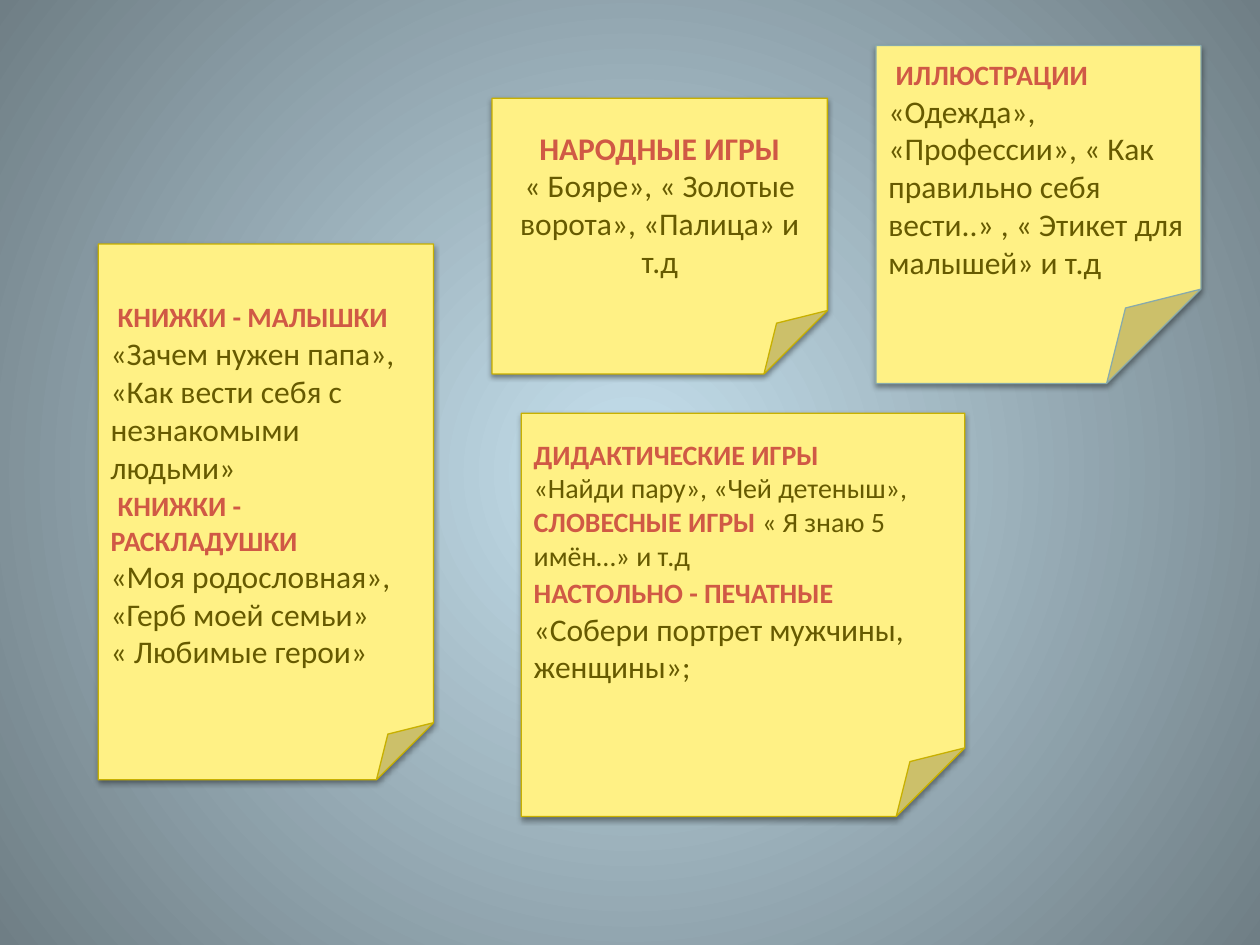
from lxml import etree
from pptx import Presentation
from pptx import util as u
from pptx.dml.color import RGBColor
from pptx.enum import shapes, text
from pptx.oxml import ns, parse_xml

PAPER = RGBColor(0xFF, 0xF1, 0x85)
GOLD = RGBColor(0xC8, 0xB0, 0x00)
TEAL = RGBColor(0x88, 0xAA, 0xAB)
HEADING = RGBColor(0xD0, 0x59, 0x45)
BODY = RGBColor(0x66, 0x5A, 0x00)
GLOW = RGBColor(0xC5, 0xE0, 0xED)
EDGE = RGBColor(0x6F, 0x7E, 0x85)

RADIAL = (f'<a:path {ns.nsdecls("a")} path="circle">'
          '<a:fillToRect l="50000" t="50000" r="50000" b="50000"/></a:path>')
SHADOW = (f'<a:outerShdw {ns.nsdecls("a")} blurRad="40000" dist="20000" '
          'dir="5400000" rotWithShape="0"><a:srgbClr val="000000">'
          '<a:alpha val="38000"/></a:srgbClr></a:outerShdw>')


def head(words, size=16):
    return words, {"size": u.Pt(size), "bold": True}, HEADING


def body(words, size=18):
    return words, {"size": u.Pt(size), "bold": False}, BODY


class NoteBoard:
    """Holds the style and the current slide."""

    font_name = "Calibri"

    def __init__(self, deck):
        self.page = deck.slides.add_slide(deck.slide_layouts[6])

    def background(self, centre, rim):
        fill = self.page.background.fill
        fill.gradient()
        for stop, colour in zip(fill.gradient_stops, (centre, rim)):
            stop.color.rgb = colour
        gradient = self.page.element.find(".//" + ns.qn("a:gradFill"))
        gradient.replace(gradient.find(ns.qn("a:lin")), parse_xml(RADIAL))

    def note(self, place, paragraphs, border=GOLD, fold=0.17,
             align=text.PP_ALIGN.LEFT, bottom=0.13):
        box = self.page.shapes.add_shape(
            shapes.MSO_SHAPE.FOLDED_CORNER, *(u.Cm(length) for length in place))
        self.fold_corner(box, fold)
        box.fill.solid()
        box.fill.fore_color.rgb = PAPER
        box.line.color.rgb = border
        box.line.width = u.Pt(0.75)
        self.drop_shadow(box)

        frame = box.text_frame
        frame_format = {"word_wrap": True, "margin_bottom": u.Cm(bottom),
                        "vertical_anchor": text.MSO_ANCHOR.MIDDLE}
        for name, value in frame_format.items():
            setattr(frame, name, value)
        for index, spans in enumerate(paragraphs):
            para = frame.add_paragraph() if index else frame.paragraphs[0]
            para.alignment = align
            for span in spans:
                self.span(para, *span)

    def span(self, para, words, font_format, colour):
        run = para.add_run()
        run.text = words
        for name, value in {"name": self.font_name, **font_format}.items():
            setattr(run.font, name, value)
        run.font.color.rgb = colour

    def fold_corner(self, box, fold):
        # python-pptx lists no adjustment for this preset
        guides = box.element.spPr.find(".//" + ns.qn("a:avLst"))
        etree.SubElement(guides, ns.qn("a:gd"), name="adj",
                         fmla=f"val {round(fold * 100000)}")

    def drop_shadow(self, box):
        box.shadow.inherit = False
        effects = box.element.spPr.find(ns.qn("a:effectLst"))
        effects.append(parse_xml(SHADOW))


def main():
    deck = Presentation()
    deck.slide_width, deck.slide_height = u.Cm(25.4), u.Cm(19.05)
    board = NoteBoard(deck)
    board.background(GLOW, EDGE)

    # Small books and fold-out books
    board.note((1.98, 4.92, 6.76, 10.8), [
        [body(" "), head("КНИЖКИ - МАЛЫШКИ")],
        [body("«Зачем нужен папа», «Как вести себя с незнакомыми людьми»")],
        [body(" "), head("КНИЖКИ - РАСКЛАДУШКИ")],
        [body("«Моя родословная», «Герб моей семьи»")],
        [body("« Любимые герои»")],
    ])

    # Illustrations
    board.note((17.66, 0.92, 6.55, 6.81), [
        [body(" "), head("ИЛЛЮСТРАЦИИ "),
         body("«Одежда», «Профессии», « Как правильно себя вести..» , "
              "« Этикет для малышей» и т.д")],
    ], border=TEAL, fold=0.29)

    # Didactic, word and board games; the text sits above the middle
    board.note((10.51, 8.33, 8.94, 8.13), [
        [head("ДИДАКТИЧЕСКИЕ ИГРЫ")],
        [body("«Найди пару», «Чей детеныш»,", 16)],
        [head("СЛОВЕСНЫЕ ИГРЫ "), body("« Я знаю 5 имён…» и т.д", 16)],
        [head("НАСТОЛЬНО - ПЕЧАТНЫЕ"), body(" "),
         body("«Собери портрет мужчины, женщины»;")],
    ], bottom=0.9)

    # Folk games
    board.note((9.92, 1.98, 6.76, 5.56), [
        [head("НАРОДНЫЕ ИГРЫ", 18)],
        [body("« Бояре», « Золотые ворота», «Палица» и т.д")],
    ], fold=0.23, align=text.PP_ALIGN.CENTER)

    deck.save("out.pptx")


if __name__ == "__main__":
    main()
